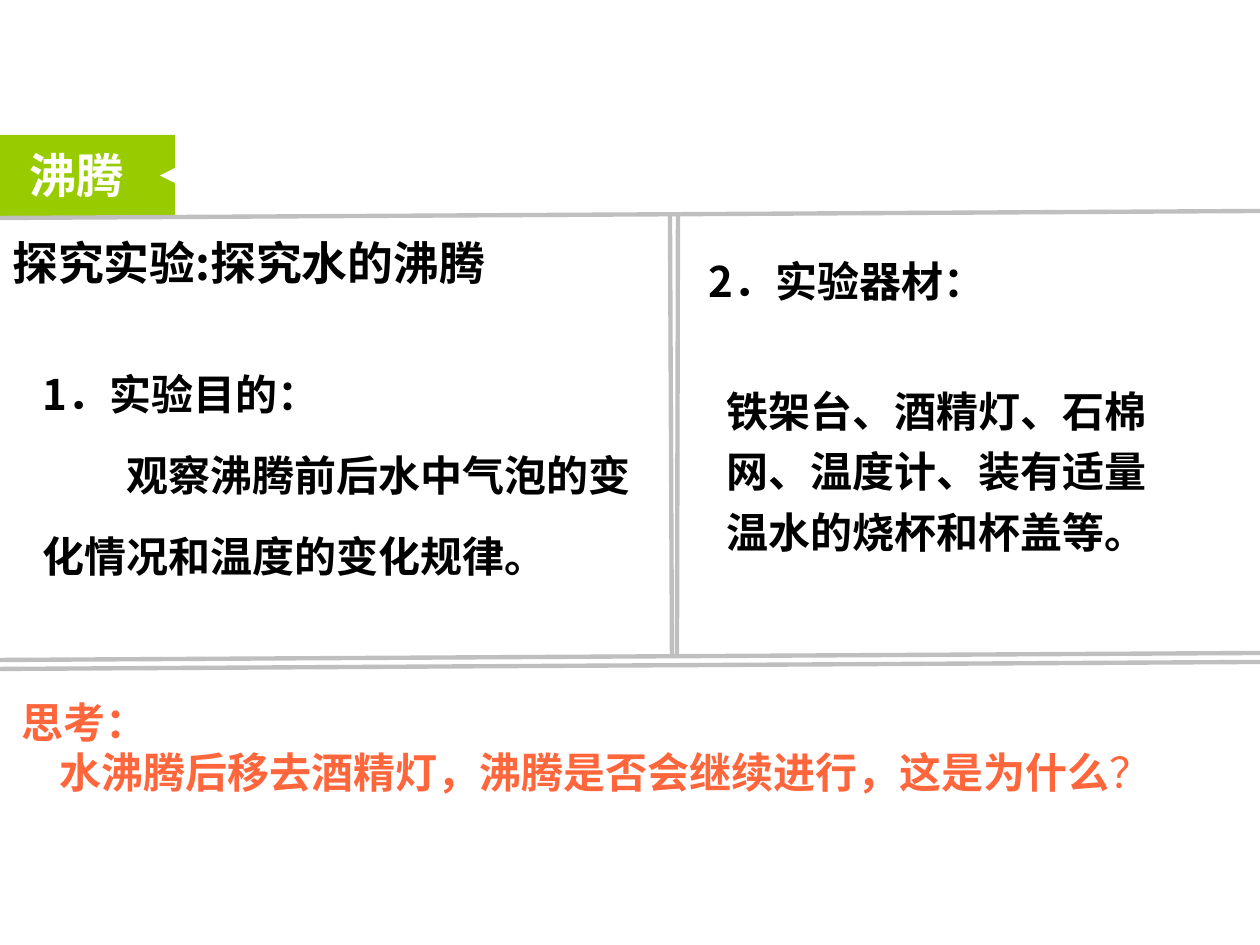
from lxml.etree import SubElement
from pptx import Presentation
from pptx.dml.color import RGBColor
from pptx.enum.shapes import MSO_CONNECTOR as Line, MSO_SHAPE as Kind
from pptx.enum.text import MSO_ANCHOR as Anchor
from pptx.oxml.ns import qn
from pptx.util import Emu, Pt

PX = 914400 // 126
HUES = {"green": "99CC00", "white": "FFFFFF", "black": "000000",
        "gray": "BFBFBF", "orange": "FF663C"}
CJK = "Noto Sans CJK SC"

TAG = [
    (Kind.RECTANGLE, (0, 135, 175, 81), "green", 0),
    (Kind.ISOSCELES_TRIANGLE, (160, 168, 15, 15), "white", 270),
]
RULES = [
    (0, 218, 1260, 211),
    (670, 216, 672, 658),
    (677, 658, 678, 213),
    (0, 660, 1260, 653),
    (0, 669, 1260, 662),
]
TEXTS = [
    dict(box=(30, 331, 617, 257), gap=1.6, mid=True, lines=[
        (0, ["1．实验目的："]),
        (84, ["观察沸腾前后水中气泡的变化情况和温度的变化规律。"])]),
    dict(box=(17, 140, 121, 71), size=27, face="Arial", hue="white", wrap=False,
         lines=[(0, ["沸腾"])]),
    dict(box=(714, 369, 460, 197), gap=1.2, lines=[
        (0, ["铁架台、酒精灯、石棉网、温度计、装有适量温水的烧杯和杯盖等。"])]),
    dict(box=(0, 228, 515, 68), size=26.2,
         lines=[(0, ["探究实验:探究水的沸腾"])]),
    dict(box=(696, 249, 302, 63), wrap=False, lines=[(0, ["2．实验器材："])]),
    dict(box=(9, 690, 1202, 115), face="Arial", hue="orange", lines=[
        (0, ["思考："]),
        (38, ["水沸腾后移去酒精灯，沸腾是否会继续进行，这是为什么", "？"])]),
]


def px(*nums):
    return [Emu(n * PX) for n in nums]


def color(name):
    return RGBColor.from_string(HUES[name])


def add_tag(slide, kind, box, hue, turn):
    shape = slide.shapes.add_shape(kind, *px(*box))
    shape.shadow.inherit = False
    shape.fill.solid()
    shape.fill.fore_color.rgb = color(hue)
    shape.line.fill.background()
    shape.rotation = turn


def add_rule(slide, ends):
    rule = slide.shapes.add_connector(Line.STRAIGHT, *px(*ends))
    rule.line.color.rgb = color("gray")
    rule.line.width = Pt(2.5)
    SubElement(rule._element.spPr, qn("a:effectLst"))


def add_text(slide, box, lines, size=24, face=CJK, hue="black",
             gap=None, wrap=True, mid=False):
    frame = slide.shapes.add_textbox(*px(*box)).text_frame
    frame.word_wrap = wrap
    frame.vertical_anchor = Anchor.MIDDLE if mid else Anchor.TOP
    for i, (indent, runs) in enumerate(lines):
        para = frame.add_paragraph() if i else frame.paragraphs[0]
        para.line_spacing = gap
        font = para.font
        font.size, font.name, font.bold = Pt(size), face, True
        font.color.rgb = color(hue)
        props = para._p.get_or_add_pPr()
        SubElement(props.find(qn("a:defRPr")), qn("a:ea"), typeface=CJK)
        if indent:
            props.set("marL", "0")
            props.set("indent", str(indent * PX))
        for j, words in enumerate(runs):
            run = para.add_run()
            run.text = words
            if j:
                run.font.bold = False


def main():
    deck = Presentation()
    deck.slide_width, deck.slide_height = px(1260, 945)
    slide = deck.slides.add_slide(deck.slide_layouts[6])
    for part in TAG:
        add_tag(slide, *part)
    for ends in RULES:
        add_rule(slide, ends)
    for text in TEXTS:
        add_text(slide, **text)
    deck.save("out.pptx")


if __name__ == "__main__":
    main()
